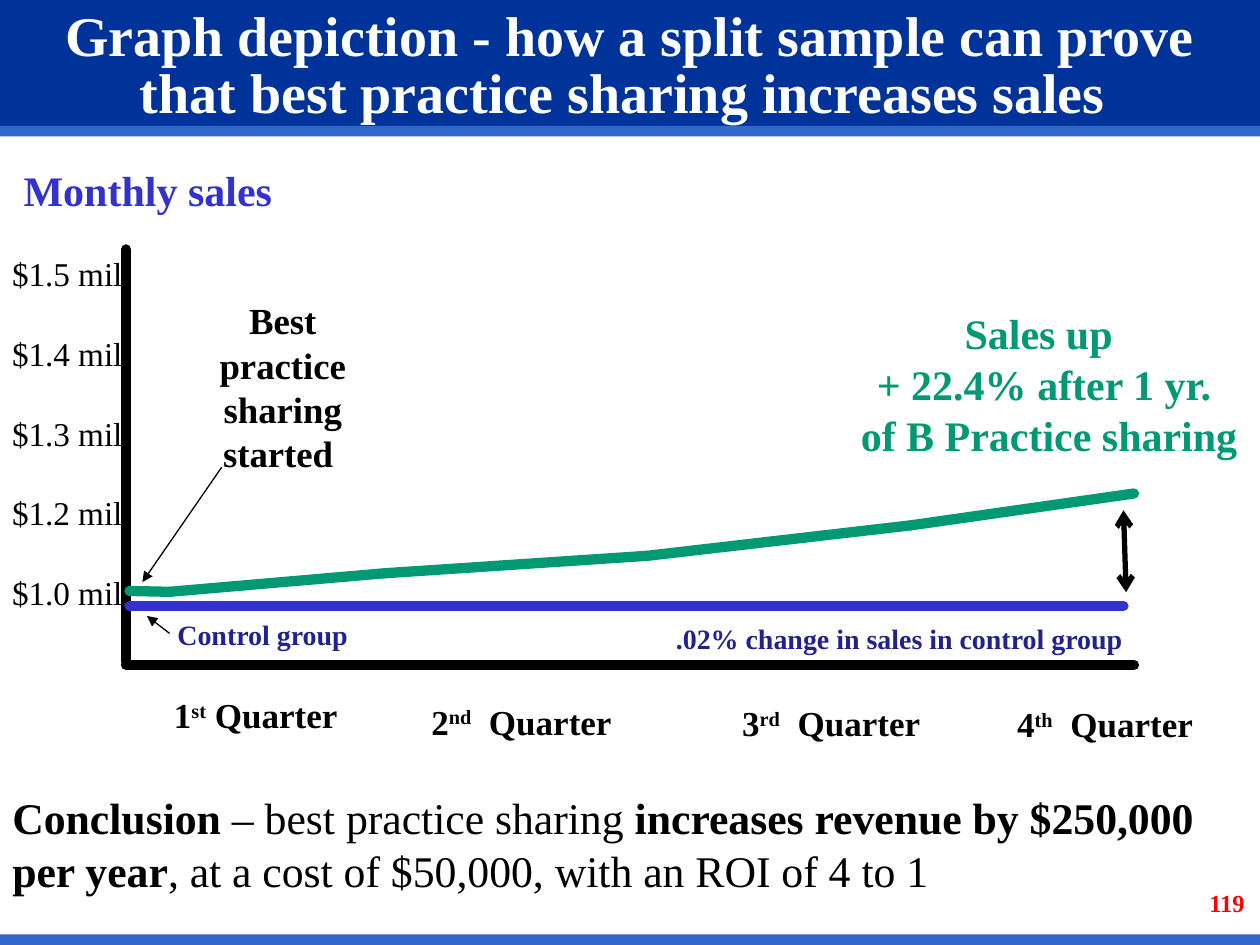
from itertools import pairwise

from lxml import etree
from pptx import Presentation
from pptx import util as u
from pptx.dml.color import RGBColor
from pptx.enum import shapes, text
from pptx.oxml import ns

FONT = "Times New Roman"
BLACK = RGBColor(0x00, 0x00, 0x00)
WHITE = RGBColor(0xFF, 0xFF, 0xFF)
NAVY = RGBColor(0x00, 0x33, 0x99)
BLUE = RGBColor(0x33, 0x66, 0xCC)
VIOLET = RGBColor(0x33, 0x33, 0xCC)
INDIGO = RGBColor(0x22, 0x22, 0x8B)
GREEN = RGBColor(0x00, 0x99, 0x73)
RED = RGBColor(0xFF, 0x00, 0x00)

LEFT = text.PP_ALIGN.LEFT
CENTER = text.PP_ALIGN.CENTER
RIGHT = text.PP_ALIGN.RIGHT
TOP = text.MSO_ANCHOR.TOP
MIDDLE = text.MSO_ANCHOR.MIDDLE
THICK = 5.88


class SlideBuilder:
    def __init__(self, presentation):
        self.slide = presentation.slides.add_slide(presentation.slide_layouts[6])

    def band(self, top, height, color):
        shape = self.slide.shapes.add_shape(
            shapes.MSO_SHAPE.RECTANGLE, 0, u.Pt(top), u.Pt(720), u.Pt(height))
        shape.shadow.inherit = False
        shape.fill.solid()
        shape.fill.fore_color.rgb = color
        shape.line.fill.background()

    def label(self, box, paragraphs, size, color=BLACK, bold=True, align=CENTER,
              anchor=TOP, wrap=False, inset=True, spacing=None, gap=0):
        frame = self.slide.shapes.add_textbox(*map(u.Pt, box)).text_frame
        frame.word_wrap = wrap
        frame.vertical_anchor = anchor
        if not inset:
            frame.margin_left = frame.margin_right = 0
            frame.margin_top = frame.margin_bottom = 0
        for index, runs in enumerate(paragraphs):
            paragraph = frame.paragraphs[0] if index == 0 else frame.add_paragraph()
            paragraph.alignment = align
            paragraph.line_spacing = u.Pt(spacing or round(1.21 * size, 1))
            paragraph.space_before = u.Pt(gap if index else 0)
            font = paragraph.font
            font.name, font.size, font.bold = FONT, u.Pt(size), bold
            font.color.rgb = color
            for content in [runs] if isinstance(runs, str) else runs:
                paragraph.add_run().text = content
        return frame.paragraphs[0].runs

    def line(self, start, end, color=BLACK, width=THICK, head=None, tail=None):
        connector = self.slide.shapes.add_connector(
            shapes.MSO_CONNECTOR.STRAIGHT, *map(u.Pt, (*start, *end)))
        connector.line.color.rgb = color
        connector.line.width = u.Pt(width)
        outline = connector.line._get_or_add_ln()
        if width == THICK:
            outline.set("cap", "rnd")
        for tag, kind in (("a:headEnd", head), ("a:tailEnd", tail)):
            if kind:
                etree.SubElement(outline, ns.qn(tag), type=kind)
        etree.SubElement(connector._element.spPr, ns.qn("a:effectLst"))

    def polyline(self, points, color):
        for start, end in pairwise(points):
            self.line(start, end, color)


def main():
    presentation = Presentation()
    presentation.slide_width, presentation.slide_height = u.Pt(720), u.Pt(540)
    builder = SlideBuilder(presentation)

    builder.band(0, 72, NAVY)
    builder.band(72, 6, BLUE)
    builder.band(534, 6, BLUE)
    builder.label((684, 504, 36, 36), ["119"], 14, RED, align=LEFT)
    builder.label(
        (0, 24, 720, 30),
        ["Graph depiction - how a split sample can prove "
         "that best practice sharing increases sales "],
        32, WHITE, anchor=MIDDLE, wrap=True, spacing=32)

    conclusion = builder.label(
        (0, 448, 714, 68),
        [("Conclusion", " – best practice sharing ",
          "increases revenue by $250,000 per year",
          ", at a cost of $50,000, with an ROI of 4 to 1")],
        25, bold=None, align=LEFT, wrap=True)
    for index, run in enumerate(conclusion):
        run.font.bold = index % 2 == 0

    builder.line((72, 142.5), (72, 378))
    builder.line((72, 380), (648, 380))
    builder.label((13.5, 93.6, 153, 29), ["Monthly sales"], 24, VIOLET,
                  align=LEFT, inset=False)
    builder.label((-6, 141, 89, 215),
                  [f"${value} mil" for value in ("1.5", "1.4", "1.3", "1.2", "1.0")],
                  19, bold=False, wrap=True, gap=22.6)

    builder.polyline([(x, 346.3) for x in (74, 219, 371, 521, 642)], VIOLET)
    builder.polyline([(74, 337.7), (97, 338.2), (219.5, 327.6), (370, 317.6),
                      (520.5, 300.2), (648, 282)], GREEN)

    builder.label((116.6, 170, 90, 101.5), ["Best practice sharing started "], 21,
                  wrap=True, inset=False)
    builder.line((126.7, 267), (81.4, 332.6), width=0.75, tail="triangle")
    builder.label((478, 172, 237, 94),
                  ["Sales up ", "+ 22.4% after 1 yr.", " of B Practice sharing"],
                  24, GREEN)
    builder.line((642, 291.6), (643.5, 338.4), width=3, head="arrow", tail="arrow")

    builder.label((93.6, 349, 113, 26.6), ["Control group"], 16, INDIGO)
    builder.line((97, 362), (84, 352), width=0.75, tail="triangle")
    builder.label((377.3, 351.4, 273, 26.6),
                  [".02% change in sales in control group"], 16, INDIGO)

    quarters = (
        ((1, 392.4, 199, 32), "1", "st", " Quarter", RIGHT),
        ((234, 389, 128, 46), "2", "nd", "  Quarter", CENTER),
        ((407, 390, 136, 46), "3", "rd", "  Quarter", CENTER),
        ((567, 390.5, 129, 46), "4", "th", "  Quarter", CENTER),
    )
    for box, number, suffix, word, align in quarters:
        runs = builder.label(box, [(number, suffix, word)], 20,
                             align=align, anchor=MIDDLE, wrap=True)
        runs[1].font._element.set("baseline", "30000")

    presentation.save("out.pptx")


if __name__ == "__main__":
    main()
